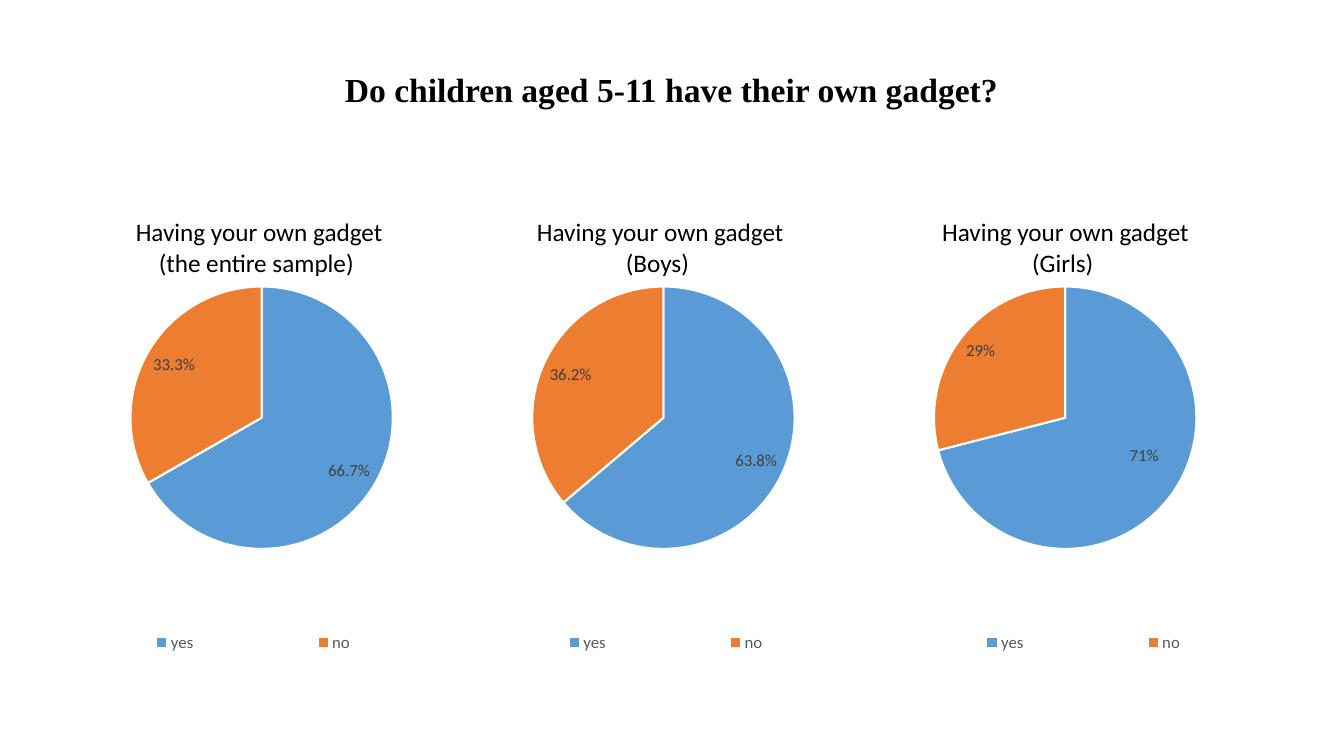
from copy import deepcopy

from lxml import etree
from pptx import Presentation
from pptx.chart.data import CategoryChartData
from pptx.dml.color import RGBColor
from pptx.enum.chart import XL_CHART_TYPE as ChartType
from pptx.enum.chart import XL_LABEL_POSITION as LabelPosition
from pptx.enum.chart import XL_LEGEND_POSITION as LegendPosition
from pptx.enum.text import MSO_AUTO_SIZE as AutoSize
from pptx.enum.text import PP_ALIGN as Align
from pptx.oxml.ns import qn
from pptx.util import Pt

BLACK = RGBColor(0x00, 0x00, 0x00)
WHITE = RGBColor(0xFF, 0xFF, 0xFF)
LABEL_GREY = RGBColor(0x40, 0x40, 0x40)
LEGEND_GREY = RGBColor(0x59, 0x59, 0x59)
SLICE_COLOURS = [RGBColor(0x5B, 0x9B, 0xD5), RGBColor(0xED, 0x7D, 0x31)]

CHART_LEFT, CHART_STEP = -7.2, 287
# group, share of yes, share of no, caption left, legend left (part of chart width)
GROUPS = [
    ("(the entire sample) ", 66.7, 33.3, 88.6, 0.09),
    ("(Boys) ", 63.8, 36.2, 375.1, 0.11),
    ("(Girls) ", 71, 29, 664.6, 0.14),
]


def make_layout(**values):
    """Return a c:layout element with the given manual settings, in schema order."""
    layout = etree.Element(qn("c:layout"))
    manual = etree.SubElement(layout, qn("c:manualLayout"))
    for name, value in values.items():
        etree.SubElement(manual, qn(f"c:{name}")).set("val", str(value))
    return layout


def add_centred_text(page, text, left, top, width, height, size, font, bold, wrap):
    box = page.shapes.add_textbox(Pt(left), Pt(top), Pt(width), Pt(height))
    frame = box.text_frame
    frame.text = text
    frame.word_wrap = wrap
    frame.auto_size = AutoSize.SHAPE_TO_FIT_TEXT
    for para in frame.paragraphs:
        para.alignment = Align.CENTER
        for span in para.runs:
            span.font.name = font
            span.font.size = Pt(size)
            span.font.bold = bold
            span.font.color.rgb = BLACK


deck = Presentation()
deck.slide_width, deck.slide_height = Pt(960), Pt(540)
page = deck.slides.add_slide(deck.slide_layouts[6])

add_centred_text(page, "Do children aged 5-11 have their own gadget?",
                 170, 45.4, 619, 36, 24, "Times New Roman", True, True)

charts = []
for index, (group, yes, no, caption_left, legend_left) in enumerate(GROUPS):
    data = CategoryChartData()
    data.categories = ["yes", "no"]
    data.add_series("Series 1", [yes, no])
    chart = page.shapes.add_chart(
        ChartType.PIE, Pt(CHART_LEFT + CHART_STEP * index), Pt(141.1),
        Pt(380.2), Pt(342), data).chart
    charts.append(chart)
    chart.has_title = False
    chart.font.name = "Calibri"
    chart.font.size = Pt(10)
    chart.font.color.rgb = BLACK

    plot_area = chart.plots[0]._element.getparent()
    for old_layout in plot_area.findall(qn("c:layout")):
        plot_area.remove(old_layout)
    plot_area.insert(0, make_layout(
        layoutTarget="inner", xMode="edge", yMode="edge",
        x=0.264, y=0.174, w=0.493, h=0.572))

    chart.has_legend = True
    legend = chart.legend
    legend.position = LegendPosition.BOTTOM
    legend.include_in_layout = False
    legend.font.name = "Calibri"
    legend.font.size = Pt(12)
    legend.font.color.rgb = LEGEND_GREY
    for old_layout in legend._element.findall(qn("c:layout")):
        legend._element.remove(old_layout)
    legend._element.find(qn("c:legendPos")).addnext(make_layout(
        xMode="edge", yMode="edge", x=legend_left, y=0.89, w=0.81, h=0.08))

    plot = chart.plots[0]
    plot.vary_by_categories = True
    series = plot.series[0]
    for number, colour in enumerate(SLICE_COLOURS):
        slice_format = series.points[number].format
        slice_format.fill.solid()
        slice_format.fill.fore_color.rgb = colour
        slice_format.line.color.rgb = WHITE
        slice_format.line.width = Pt(1.5)

    labels = series.data_labels
    labels.show_value = True
    labels.show_percentage = False
    labels.number_format = 'General"%"'
    labels.number_format_is_linked = False
    labels.position = LabelPosition.INSIDE_END
    labels.font.name = "Calibri"
    labels.font.size = Pt(12)
    labels.font.color.rgb = LABEL_GREY

    add_centred_text(page, f"Having your own gadget\n{group}",
                     caption_left, 151.2, 193, 51, 18, "Calibri", False, False)

# The yes label of the girls sits a little above its usual place.
girls = charts[-1].plots[0].series[0]
girls_label = girls.points[0].data_label
girls_label.position = LabelPosition.INSIDE_END
girls_label.font.name = "Calibri"
girls_label.font.size = Pt(12)
girls_label.font.color.rgb = LABEL_GREY
number_format = girls.data_labels._element.find(qn("c:numFmt"))
label_index = girls.data_labels._element.find(qn("c:dLbl")).find(qn("c:idx"))
label_index.addnext(deepcopy(number_format))
label_index.addnext(make_layout(x=-0.01, y=-0.06))

deck.save("out.pptx")
